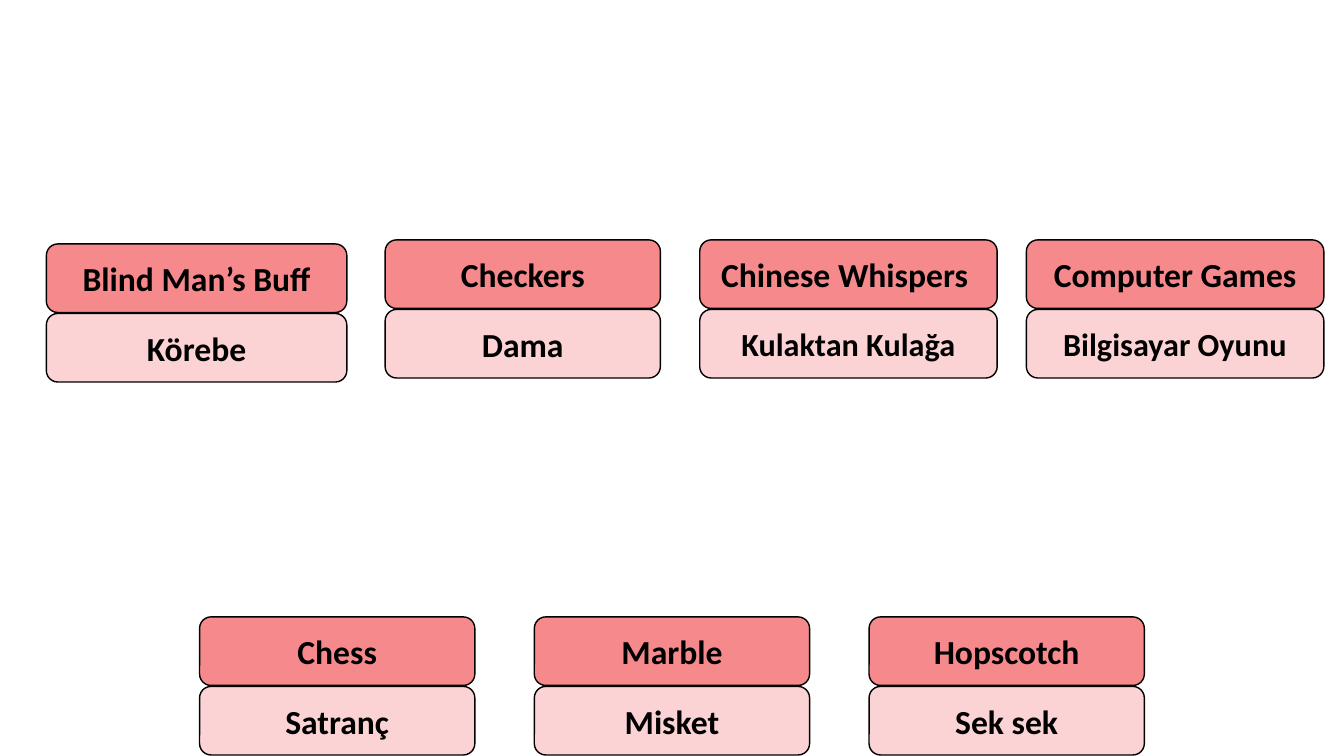
from pptx import Presentation
from pptx.dml.color import RGBColor
from pptx.enum.shapes import MSO_SHAPE
from pptx.enum.text import MSO_ANCHOR, PP_ALIGN
from pptx.util import Inches, Pt


def color(value):
    return RGBColor.from_string(value)


class GameSlide:
    font_name = "Calibri"
    ink = "000000"
    english_fill = "F5898B"
    turkish_fill = "FCD3D4"
    label_height = 0.68
    label_pitch = 0.69

    def __init__(self, deck):
        self.page = deck.slides.add_slide(deck.slide_layouts[6])

    def label(self, text, left, top, width, fill, size):
        box = self.page.shapes.add_shape(
            MSO_SHAPE.ROUNDED_RECTANGLE,
            Inches(left), Inches(top), Inches(width), Inches(self.label_height),
        )
        box.shadow.inherit = False
        box.fill.solid()
        box.fill.fore_color.rgb = color(fill)
        box.line.color.rgb = color(self.ink)
        box.line.width = Pt(1)
        frame = box.text_frame
        frame.word_wrap = True
        frame.vertical_anchor = MSO_ANCHOR.MIDDLE
        para = frame.paragraphs[0]
        para.text = text
        para.alignment = PP_ALIGN.CENTER
        para.font.name = self.font_name
        para.font.size = Pt(size)
        para.font.bold = True
        para.font.color.rgb = color(self.ink)

    def game(self, english, turkish, left, top, width, turkish_size=24):
        self.label(english, left, top, width, self.english_fill, 24)
        self.label(turkish, left, top + self.label_pitch, width,
                   self.turkish_fill, turkish_size)


def main():
    deck = Presentation()
    deck.slide_width = Inches(13.33)
    deck.slide_height = Inches(7.5)
    slide = GameSlide(deck)

    slide.game("Blind Man’s Buff", "Körebe", 0.46, 2.42, 2.98)
    slide.game("Checkers", "Dama", 3.82, 2.38, 2.73)
    slide.game("Chinese Whispers ", "Kulaktan Kulağa", 6.94, 2.38, 2.95, 23)
    slide.game("Computer Games", "Bilgisayar Oyunu", 10.18, 2.38, 2.95, 23)

    lower_games = [("Chess", "Satranç"), ("Marble", "Misket"), ("Hopscotch", "Sek sek")]
    for column, (english, turkish) in enumerate(lower_games):
        slide.game(english, turkish, 1.98 + 3.32 * column, 6.12, 2.73)

    deck.save("out.pptx")


if __name__ == "__main__":
    main()
